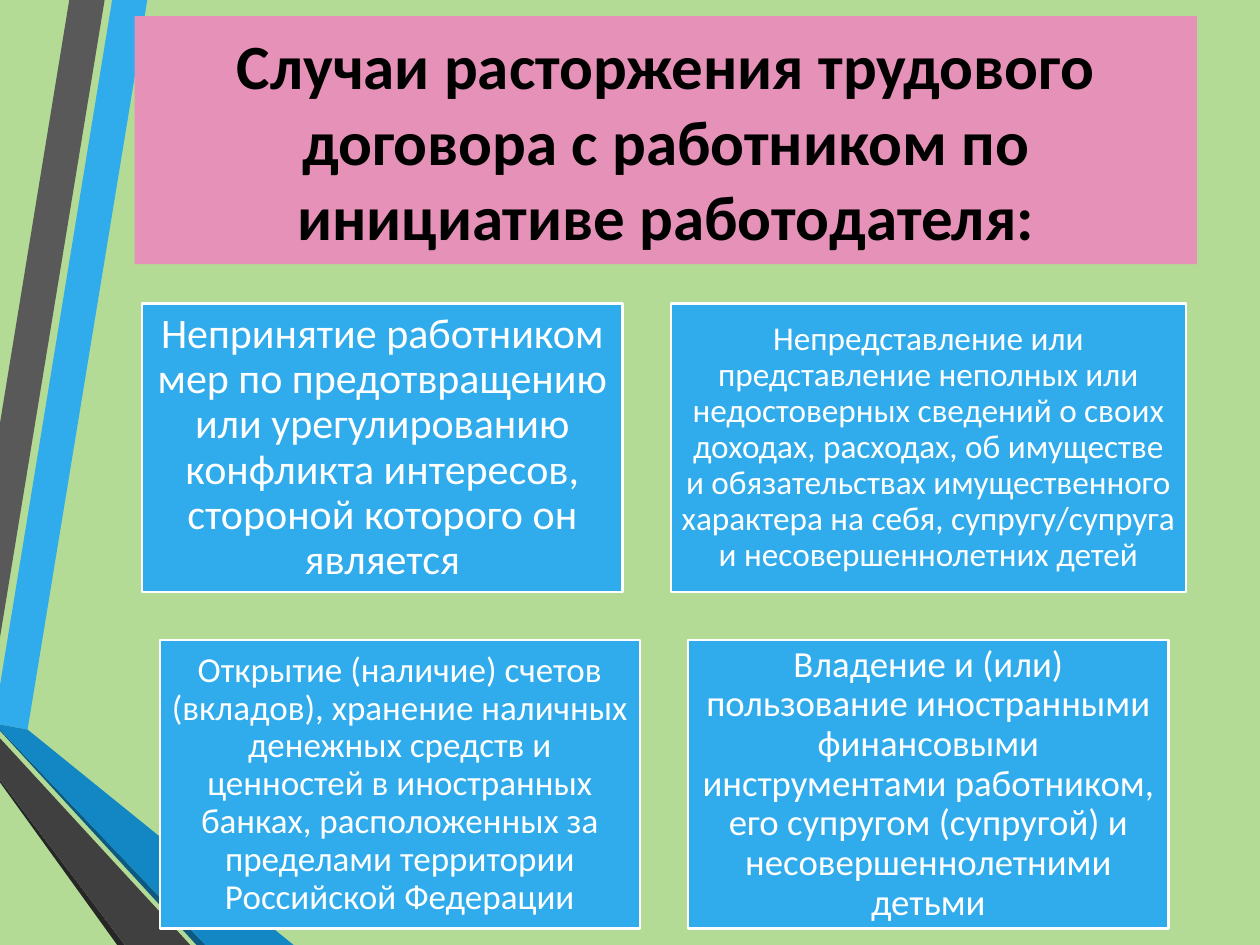
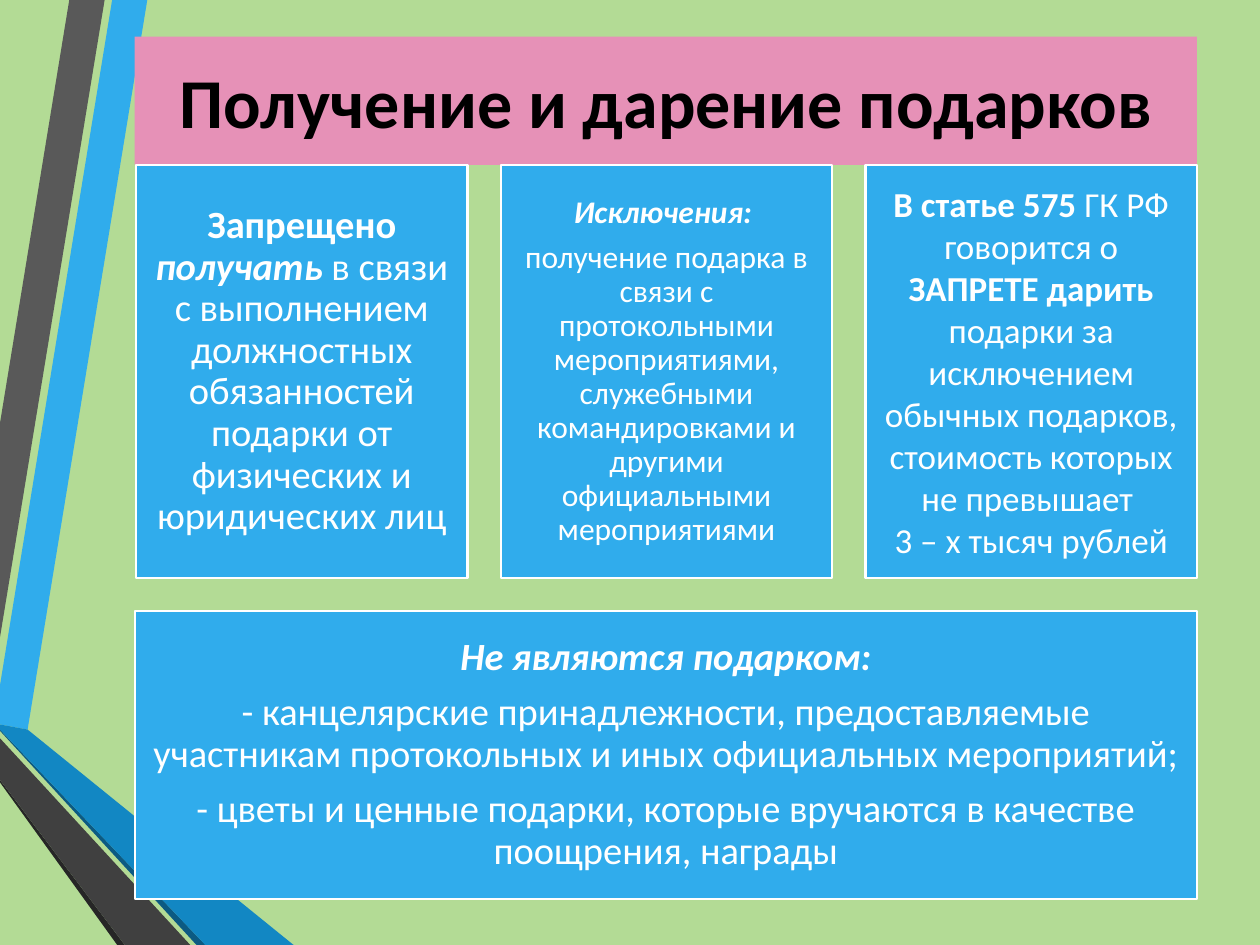
from pptx import Presentation
from pptx.dml.color import RGBColor
from pptx.enum import shapes, text
from pptx.util import Pt

FONT = "Calibri"
GREEN, PINK, BLUE = "B3DB95", "E691B7", "30ACEC"
WHITE, BLACK = "FFFFFF", "000000"
BAND_LEFT, BAND_WIDTH = 77, 607
CARD_HEIGHT = 164.8

# Ribbons at the left edge, from back to front: colour and outline in points
RIBBONS = [
    (BLUE, [(0, 391.7), (0, 414), (15.8, 416.9), (84.2, 0), (64.1, 0)]),
    ("595959", [(59.8, 0), (39.6, 0), (0, 241.9), (0, 364.3)]),
    ("262626", [(0, 445.7), (0, 447.1), (67, 540), (71.3, 540)]),
    ("0C5A82", [(0, 416.9), (0, 417.6), (112.3, 540), (117.4, 540)]),
    ("1287C3", [(0, 416.9), (117.4, 540), (167.8, 540), (15.8, 416.9), (0, 414)]),
    ("404040", [(0, 445.7), (71.3, 540), (108.7, 540), (0, 421.9)]),
]


def paint(fill, colour):
    fill.solid()
    fill.fore_color.rgb = RGBColor.from_string(colour)


def write(frame, paragraphs, size, colour, line_spacing=None, gap=0):
    """Fill a frame; each paragraph is a list of (words, style), style using b and i."""
    frame.word_wrap = True
    frame.vertical_anchor = text.MSO_ANCHOR.MIDDLE
    for index, runs in enumerate(paragraphs):
        paragraph = frame.add_paragraph() if index else frame.paragraphs[0]
        paragraph.alignment = text.PP_ALIGN.CENTER
        paragraph.line_spacing = line_spacing
        paragraph.space_before = Pt(gap if index else 0)
        for words, style in runs:
            run = paragraph.add_run()
            run.text = words
            run.font.name, run.font.size = FONT, Pt(size)
            run.font.bold, run.font.italic = "b" in style, "i" in style
            run.font.color.rgb = RGBColor.from_string(colour)


def add_box(slide, box, colour):
    panel = slide.shapes.add_shape(shapes.MSO_SHAPE.RECTANGLE, *map(Pt, box))
    panel.shadow.inherit = False
    paint(panel.fill, colour)
    panel.line.fill.background()
    return panel


def add_title(slide, box, words, size):
    band = add_box(slide, box, PINK)
    write(band.text_frame, [[(words, "b")]], size, BLACK)


def add_card(slide, box, paragraphs, size, line_spacing=0.9, gap=None):
    """Blue card whose margins and paragraph gaps follow its text size."""
    card = add_box(slide, box, BLUE)
    paint(card.line.fill, WHITE)
    card.line.width = Pt(1.25)
    frame = card.text_frame
    frame.margin_left = frame.margin_right = Pt(0.3 * size)
    frame.margin_top = frame.margin_bottom = Pt(0.3 * size)
    gap = 0.35 * size if gap is None else gap
    write(frame, paragraphs, size, WHITE, line_spacing, gap)


def add_backdrop(slide):
    paint(slide.background.fill, GREEN)
    for colour, outline in RIBBONS:
        corners = [(Pt(x), Pt(y)) for x, y in outline]
        builder = slide.shapes.build_freeform(*corners[0], scale=1.0)
        builder.add_line_segments(corners[1:], close=True)
        ribbon = builder.convert_to_shape()
        ribbon.shadow.inherit = False
        paint(ribbon.fill, colour)
        ribbon.line.fill.background()


def add_centred_rows(slide, box, rows, gap):
    """Rows of (width, size, words) cards, each row centred in the box."""
    left, top, width, height = box
    card_height = (height - gap * (len(rows) - 1)) / len(rows)
    for index, row in enumerate(rows):
        row_width = sum(card[0] for card in row) + gap * (len(row) - 1)
        x = left + (width - row_width) / 2
        y = top + index * (card_height + gap)
        for card_width, size, words in row:
            add_card(slide, (x, y, card_width, card_height), [[(words, "")]], size)
            x += card_width + gap


def add_columns(slide, box, cards, gap):
    left, top, width, height = box
    card_width = (width - gap * (len(cards) - 1)) / len(cards)
    for index, card in enumerate(cards):
        x = left + index * (card_width + gap)
        add_card(slide, (x, top, card_width, height), **card)


def build_dismissal(slide):
    add_backdrop(slide)
    add_title(slide, (BAND_LEFT, 9.2, BAND_WIDTH, 141.8),
              "Случаи расторжения трудового договора с работником по инициативе "
              "работодателя:", 36)
    rows = [
        [(274.5, 24, "Непринятие работником мер по предотвращению или урегулированию "
                     "конфликта интересов, стороной которого он является"),
         (294.5, 19, "Непредставление или представление неполных или недостоверных "
                     "сведений о своих доходах, расходах, об имуществе и обязательствах "
                     "имущественного характера на себя, супругу/супруга и "
                     "несовершеннолетних детей")],
        [(274.5, 20, "Открытие (наличие) счетов (вкладов), хранение наличных денежных "
                     "средств и ценностей в иностранных банках, расположенных за "
                     "пределами территории Российской Федерации"),
         (274.5, 21, "Владение и (или) пользование иностранными финансовыми "
                     "инструментами работником, его супругом (супругой) и "
                     "несовершеннолетними детьми")],
    ]
    gap = 27.5
    add_centred_rows(slide, (BAND_LEFT, 173.5, 605, 2 * CARD_HEIGHT + gap), rows, gap)


def build_gifts(slide):
    add_backdrop(slide)
    add_title(slide, (BAND_LEFT, 20.9, BAND_WIDTH, 73.4), "Получение и дарение подарков", 40)
    banned = [[("Запрещено ", "b"), ("получать", "bi"),
               (" в связи с выполнением должностных обязанностей подарки от "
                "физических и юридических лиц", "")]]
    exceptions = [[("Исключения: ", "bi")],
                  [("получение подарка в связи с протокольными мероприятиями, "
                    "служебными командировками и другими официальными "
                    "мероприятиями", "")]]
    civil_code = [[("В статье 575", "b"), (" ГК РФ говорится о ", ""),
                   ("ЗАПРЕТЕ дарить", "b"),
                   (" подарки за исключением обычных подарков, стоимость которых "
                    "не превышает ", "")],
                  [("3 – х тысяч рублей", "")]]
    not_gifts = [[("Не являются подарком:", "bi")],
                 [("- канцелярские принадлежности, предоставляемые участникам "
                   "протокольных и иных официальных мероприятий;", "")],
                 [("- цветы и ценные подарки, которые вручаются в качестве "
                   "поощрения, награды", "")]]
    add_columns(slide, (BAND_LEFT + 0.7, 94.4, BAND_WIDTH - 0.7, 236), [
        dict(paragraphs=banned, size=22),
        dict(paragraphs=exceptions, size=18),
        dict(paragraphs=civil_code, size=20, line_spacing=1.0, gap=0),
    ], gap=19)
    add_card(slide, (BAND_LEFT, 349.1, BAND_WIDTH, CARD_HEIGHT), not_gifts, 22)


def main():
    deck = Presentation()
    deck.slide_width, deck.slide_height = Pt(720), Pt(540)
    blank = deck.slide_layouts[6]
    for build in (build_dismissal, build_gifts):
        build(deck.slides.add_slide(blank))
    deck.save("out.pptx")


if __name__ == "__main__":
    main()
